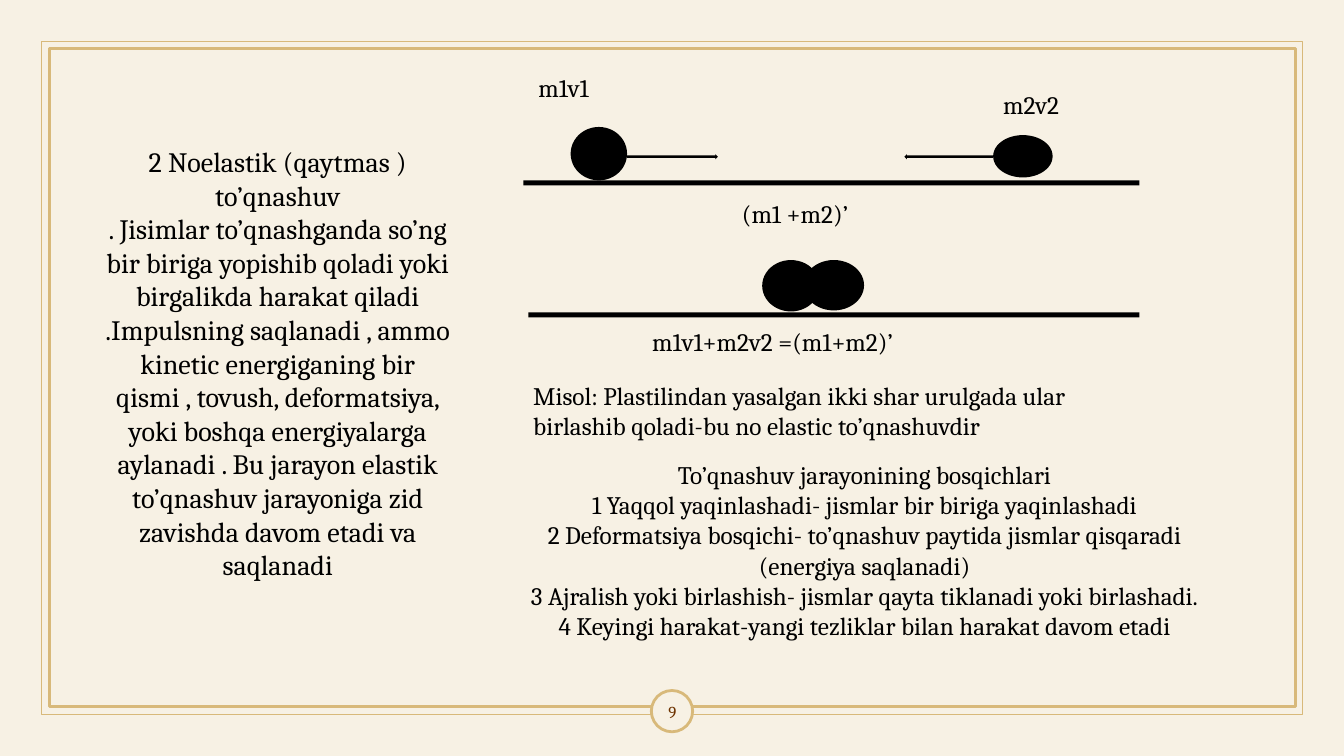
from dataclasses import dataclass

from pptx import Presentation
from pptx.dml.color import RGBColor
from pptx.enum.shapes import MSO_SHAPE as Kind
from pptx.enum.text import MSO_ANCHOR as Anchor, PP_ALIGN as Align
from pptx.util import Pt

SCALE = 9144
FONT = "Cambria"
COLORS = {"paper": "F7F1E4", "gold": "D8B97A", "ink": "000000", "brown": "6D3200"}


@dataclass
class Box:
    left: int
    top: int
    width: int
    height: int

    def emu(self) -> tuple[int, ...]:
        return tuple(n * SCALE for n in (self.left, self.top, self.width, self.height))


@dataclass
class Form:
    kind: Kind
    box: Box
    fill: str = "ink"
    line: int = 0


@dataclass
class Label:
    box: Box
    lines: list[str]
    size: int = 18
    color: str = "ink"
    align: Align = Align.LEFT


FRAME = [
    Form(Kind.RECTANGLE, Box(41, 41, 1251, 668), "", 1),
    Form(Kind.RECTANGLE, Box(49, 48, 1236, 653), "", 2),
    Form(Kind.OVAL, Box(646, 685, 41, 41), "paper", 2),
]

SCENE = [
    Form(Kind.RECTANGLE, Box(519, 179, 611, 5)),
    Form(Kind.FLOWCHART_CONNECTOR, Box(566, 126, 56, 53)),
    Form(Kind.FLOWCHART_CONNECTOR, Box(985, 134, 59, 42)),
    Form(Kind.RIGHT_ARROW, Box(622, 153, 90, 5)),
    Form(Kind.LEFT_ARROW, Box(897, 153, 88, 5)),
    Form(Kind.RECTANGLE, Box(524, 310, 606, 5)),
    Form(Kind.FLOWCHART_CONNECTOR, Box(756, 258, 57, 51)),
    Form(Kind.FLOWCHART_CONNECTOR, Box(797, 258, 60, 50)),
]

LABELS = [
    Label(Box(483, 441, 749, 209), [
        "To’qnashuv jarayonining bosqichlari",
        "1 Yaqqol yaqinlashadi- jismlar bir biriga yaqinlashadi",
        "2 Deformatsiya bosqichi- to’qnashuv paytida jismlar qisqaradi (energiya saqlanadi)",
        "3 Ajralish yoki birlashish- jismlar qayta tiklanadi yoki birlashadi.",
        "4 Keyingi harakat-yangi tezliklar bilan harakat davom etadi",
    ], align=Align.CENTER),
    Label(Box(637, 686, 60, 40), ["9"], 12, "brown", Align.CENTER),
    Label(Box(91, 93, 369, 534), [
        "2 Noelastik (qaytmas ) to’qnashuv",
        ". Jisimlar to’qnashganda so’ng bir biriga yopishib qoladi yoki birgalikda harakat qiladi",
        ".Impulsning saqlanadi , ammo kinetic energiganing bir qismi , tovush, deformatsiya, "
        "yoki boshqa energiyalarga aylanadi . Bu jarayon elastik to’qnashuv jarayoniga zid "
        "zavishda davom etadi va saqlanadi",
    ], 20, align=Align.CENTER),
    Label(Box(524, 60, 85, 53), ["m1v1"]),
    Label(Box(985, 81, 93, 45), ["m2v2"]),
    Label(Box(726, 187, 171, 50), ["(m1 +m2)’"]),
    Label(Box(637, 317, 484, 44), ["m1v1+m2v2 =(m1+m2)’"]),
    Label(Box(519, 360, 627, 95), [
        "Misol: Plastilindan yasalgan ikki shar urulgada ular birlashib qoladi-bu no elastic to’qnashuvdir",
    ]),
]


def tint(name: str) -> RGBColor:
    return RGBColor.from_string(COLORS[name])


def draw(shapes, form: Form) -> None:
    shape = shapes.add_shape(form.kind, *form.box.emu())
    shape.shadow.inherit = False
    if form.fill:
        shape.fill.solid()
        shape.fill.fore_color.rgb = tint(form.fill)
    else:
        shape.fill.background()
    if form.line:
        shape.line.color.rgb = tint("gold")
        shape.line.width = Pt(form.line)
    else:
        shape.line.fill.background()


def write(shapes, label: Label) -> None:
    frame = shapes.add_textbox(*label.box.emu()).text_frame
    frame.word_wrap = True
    frame.vertical_anchor = Anchor.MIDDLE
    frame.text = "\n".join(label.lines)
    for para in frame.paragraphs:
        para.alignment = label.align
        for run in para.runs:
            run.font.name = FONT
            run.font.size = Pt(label.size)
            run.font.color.rgb = tint(label.color)


def main() -> None:
    deck = Presentation()
    deck.slide_width = 1333 * SCALE
    deck.slide_height = 750 * SCALE
    slide = deck.slides.add_slide(deck.slide_layouts[6])
    slide.background.fill.solid()
    slide.background.fill.fore_color.rgb = tint("paper")
    for form in FRAME + SCENE:
        draw(slide.shapes, form)
    for label in LABELS:
        write(slide.shapes, label)
    deck.save("out.pptx")


if __name__ == "__main__":
    main()
